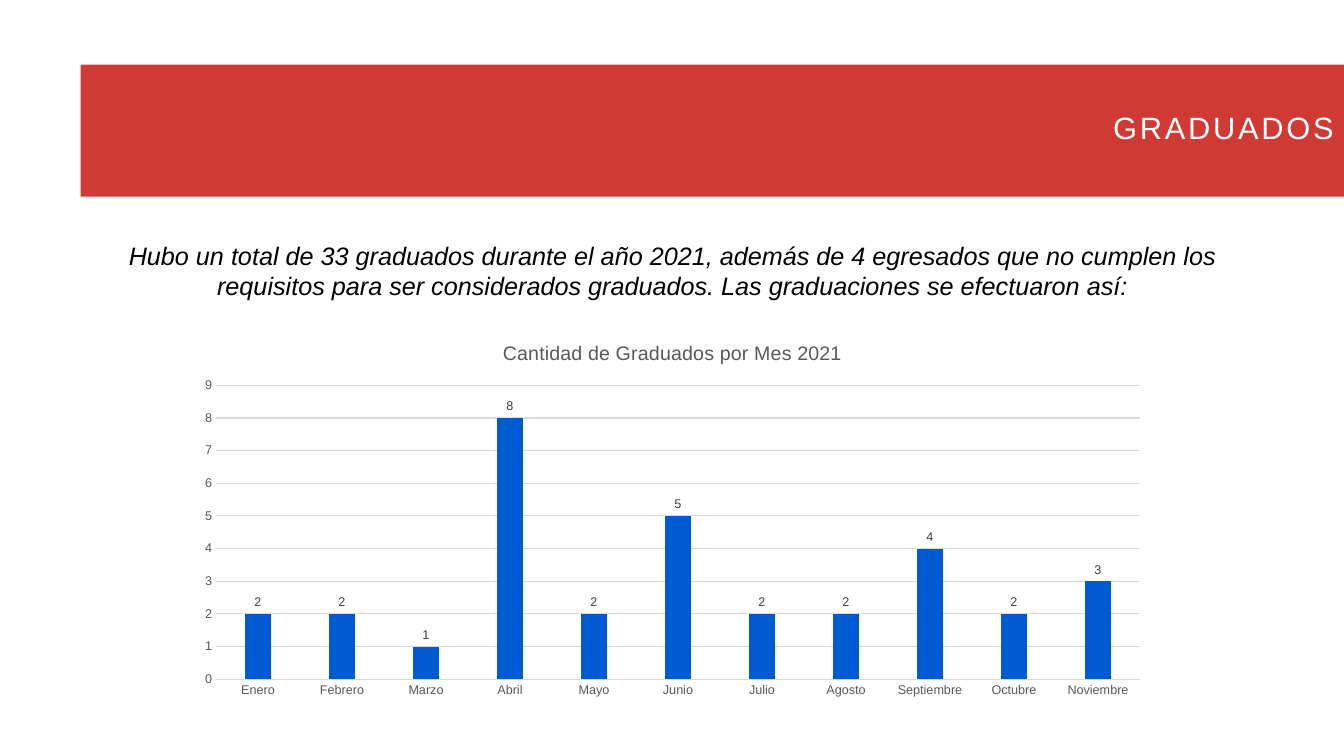
from pptx import Presentation
from pptx.chart.data import CategoryChartData
from pptx.dml.color import RGBColor
from pptx.enum.chart import XL_CHART_TYPE as ChartType
from pptx.enum.chart import XL_LABEL_POSITION as LabelPosition
from pptx.enum.chart import XL_TICK_MARK as TickMark
from pptx.enum.text import MSO_ANCHOR as Anchor
from pptx.enum.text import PP_ALIGN as Align
from pptx.util import Inches, Pt

COLORS = {
    "banner": "CF3A34",
    "white": "FFFFFF",
    "black": "000000",
    "bar": "005BD3",
    "grid": "D9D9D9",
    "axis": "595959",
    "label": "404040",
}
GRADUATES = {
    "Enero": 2, "Febrero": 2, "Marzo": 1, "Abril": 8, "Mayo": 2, "Junio": 5,
    "Julio": 2, "Agosto": 2, "Septiembre": 4, "Octubre": 2, "Noviembre": 3,
}


def color(name):
    return RGBColor.from_string(COLORS[name])


def style_font(font, size, color_name):
    font.name = "Arial"
    font.size = Pt(size)
    font.bold = False
    font.color.rgb = color(color_name)


presentation = Presentation()
presentation.slide_width = Inches(13.33)
presentation.slide_height = Inches(7.5)
slide = presentation.slides.add_slide(presentation.slide_layouts[5])

# Title banner
title = slide.shapes.title
title.left, title.top = Inches(0.8), Inches(0.64)
title.width, title.height = Inches(12.53), Inches(1.31)
title.fill.solid()
title.fill.fore_color.rgb = color("banner")
title.text_frame.text = "GRADUADOS"
title.text_frame.vertical_anchor = Anchor.MIDDLE
paragraph = title.text_frame.paragraphs[0]
paragraph.alignment = Align.RIGHT
paragraph.line_spacing = 0.8
style_font(paragraph.runs[0].font, 22, "white")
paragraph.runs[0].font._element.set("spc", "200")

# Introduction
intro = slide.shapes.add_textbox(Inches(1.14), Inches(2.33), Inches(11.06), Inches(0.71))
intro.text_frame.word_wrap = True
intro.text_frame.text = (
    "Hubo un total de 33 graduados durante el año 2021, además de 4 egresados "
    "que no cumplen los requisitos para ser considerados graduados. "
    "Las graduaciones se efectuaron así:"
)
paragraph = intro.text_frame.paragraphs[0]
paragraph.alignment = Align.CENTER
style_font(paragraph.runs[0].font, 18, "black")
paragraph.runs[0].font.italic = True

# Chart of graduates per month
chart_data = CategoryChartData()
chart_data.categories = list(GRADUATES)
chart_data.add_series("Series 1", list(GRADUATES.values()))
chart = slide.shapes.add_chart(
    ChartType.COLUMN_CLUSTERED,
    Inches(1.84), Inches(3.21), Inches(9.66), Inches(3.79), chart_data,
).chart
style_font(chart.font, 10, "black")
chart.has_legend = False
chart.has_title = True
chart.chart_title.include_in_layout = False
chart.chart_title.text_frame.text = "Cantidad de Graduados por Mes 2021"
style_font(chart.chart_title.text_frame.paragraphs[0].runs[0].font, 14, "axis")

# Columns and their labels
plot = chart.plots[0]
plot.vary_by_categories = False
plot.gap_width = 219
plot.overlap = -27
series = plot.series[0]
series.format.fill.solid()
series.format.fill.fore_color.rgb = color("bar")
labels = series.data_labels
labels.show_value = True
labels.position = LabelPosition.OUTSIDE_END
style_font(labels.font, 9, "label")

# Axes
for axis in (chart.category_axis, chart.value_axis):
    axis.major_tick_mark = TickMark.NONE
    axis.minor_tick_mark = TickMark.NONE
    style_font(axis.tick_labels.font, 9, "axis")
chart.value_axis.minimum_scale = 0
chart.value_axis.maximum_scale = 9
chart.value_axis.major_unit = 1
chart.value_axis.format.line.fill.background()
for line in (chart.category_axis.format.line, chart.value_axis.major_gridlines.format.line):
    line.color.rgb = color("grid")
    line.width = Pt(0.75)

presentation.save("out.pptx")
